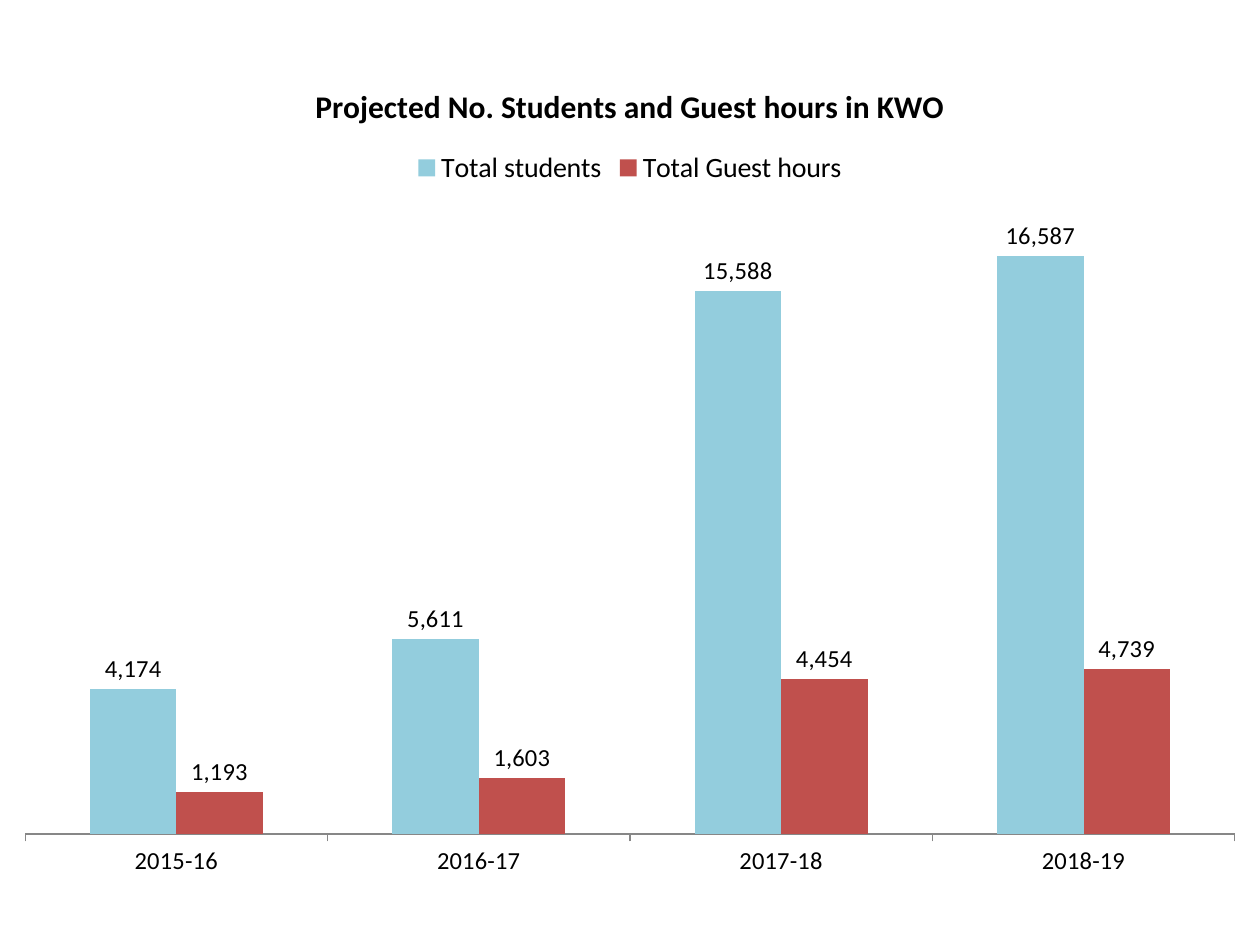
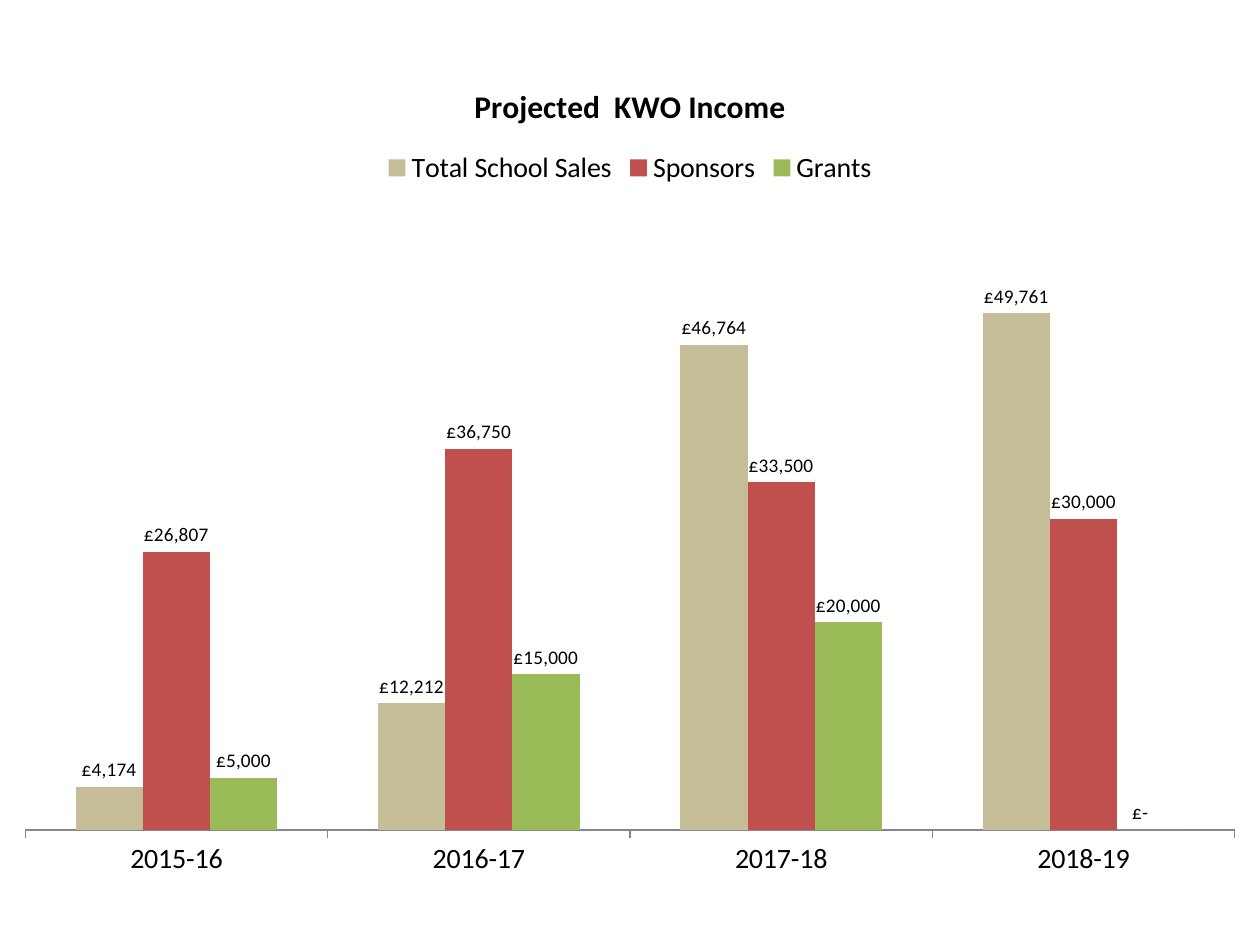
"""Build two slides charting projected students, guest hours and income."""
from pptx import Presentation
from pptx.chart.data import CategoryChartData
from pptx.dml.color import RGBColor
from pptx.enum.chart import XL_CHART_TYPE, XL_LABEL_POSITION, XL_LEGEND_POSITION, XL_TICK_MARK
from pptx.util import Cm, Pt

COLUMNS = XL_CHART_TYPE.COLUMN_CLUSTERED
LEGEND_TOP = XL_LEGEND_POSITION.TOP
ABOVE_BAR = XL_LABEL_POSITION.OUTSIDE_END
TICK_OUT = XL_TICK_MARK.OUTSIDE
TICK_NONE = XL_TICK_MARK.NONE

THEME = {
    "font": "Calibri",
    "text": "000000",
    "sky": "93CDDD",
    "red": "C0504D",
    "sand": "C4BD97",
    "green": "9BBB59",
    "base_size": 10,
    "title_size": 18,
    "legend_size": 16,
}

YEARS = ["2015-16", "2016-17", "2017-18", "2018-19"]

PROJECTIONS = [
    {
        "title": "Projected No. Students and Guest hours in KWO",
        "number_format": '_-* #,##0_-;\\-* #,##0_-;_-* "-"??_-;_-@_-',
        "year_size": 14,
        "label_size": 14,
        "axis_top": 18000,
        "measures": [
            ("Total students", "sky", [4174, 5611, 15588, 16587]),
            ("Total Guest hours", "red", [1193, 1603, 4454, 4739]),
        ],
    },
    {
        "title": "Projected  KWO Income",
        "number_format": '_-"£"* #,##0_-;\\-"£"* #,##0_-;_-"£"* "-"??_-;_-@_-',
        "year_size": 16,
        "label_size": 11,
        "axis_top": 60000,
        "measures": [
            ("Total School Sales", "sand", [4174, 12212, 46764, 49761]),
            ("Sponsors", "red", [26807, 36750, 33500, 30000]),
            ("Grants", "green", [5000, 15000, 20000, 0]),
        ],
    },
]


def apply(target, settings):
    """Set each named attribute on the target."""
    for name, value in settings.items():
        setattr(target, name, value)


def style_font(font, size, bold=False):
    """Give a font the theme's face and colour."""
    apply(font, {"name": THEME["font"], "size": Pt(size), "bold": bold})
    font.color.rgb = RGBColor.from_string(THEME["text"])


deck = Presentation()
apply(deck, {"slide_width": Cm(25.4), "slide_height": Cm(19.05)})
blank_layout = deck.slide_layouts[6]

for projection in PROJECTIONS:
    slide = deck.slides.add_slide(blank_layout)
    figures = CategoryChartData(number_format=projection["number_format"])
    figures.categories = YEARS
    for measure, _, values in projection["measures"]:
        figures.add_series(measure, values)
    chart = slide.shapes.add_chart(
        COLUMNS, Cm(0), Cm(1.12), deck.slide_width, Cm(16.89), figures
    ).chart
    style_font(chart.font, THEME["base_size"])

    apply(chart, {"has_title": True, "has_legend": True})
    heading = chart.chart_title.text_frame
    heading.text = projection["title"]
    style_font(heading.paragraphs[0].runs[0].font, THEME["title_size"], bold=True)
    apply(chart.legend, {"position": LEGEND_TOP, "include_in_layout": False})
    style_font(chart.legend.font, THEME["legend_size"])

    years = chart.category_axis
    apply(years, {"major_tick_mark": TICK_OUT, "minor_tick_mark": TICK_NONE})
    style_font(years.tick_labels.font, projection["year_size"])
    apply(chart.value_axis, {
        "visible": False,
        "has_major_gridlines": False,
        "minimum_scale": 0,
        "maximum_scale": projection["axis_top"],
    })

    bars = chart.plots[0]
    apply(bars, {"gap_width": 150, "overlap": 0, "vary_by_categories": False})
    for series, (_, colour, _) in zip(bars.series, projection["measures"]):
        series.format.fill.solid()
        series.format.fill.fore_color.rgb = RGBColor.from_string(THEME[colour])
        apply(series.data_labels, {
            "show_value": True,
            "position": ABOVE_BAR,
            "number_format": projection["number_format"],
            "number_format_is_linked": False,
        })
        style_font(series.data_labels.font, projection["label_size"])

deck.save("out.pptx")
